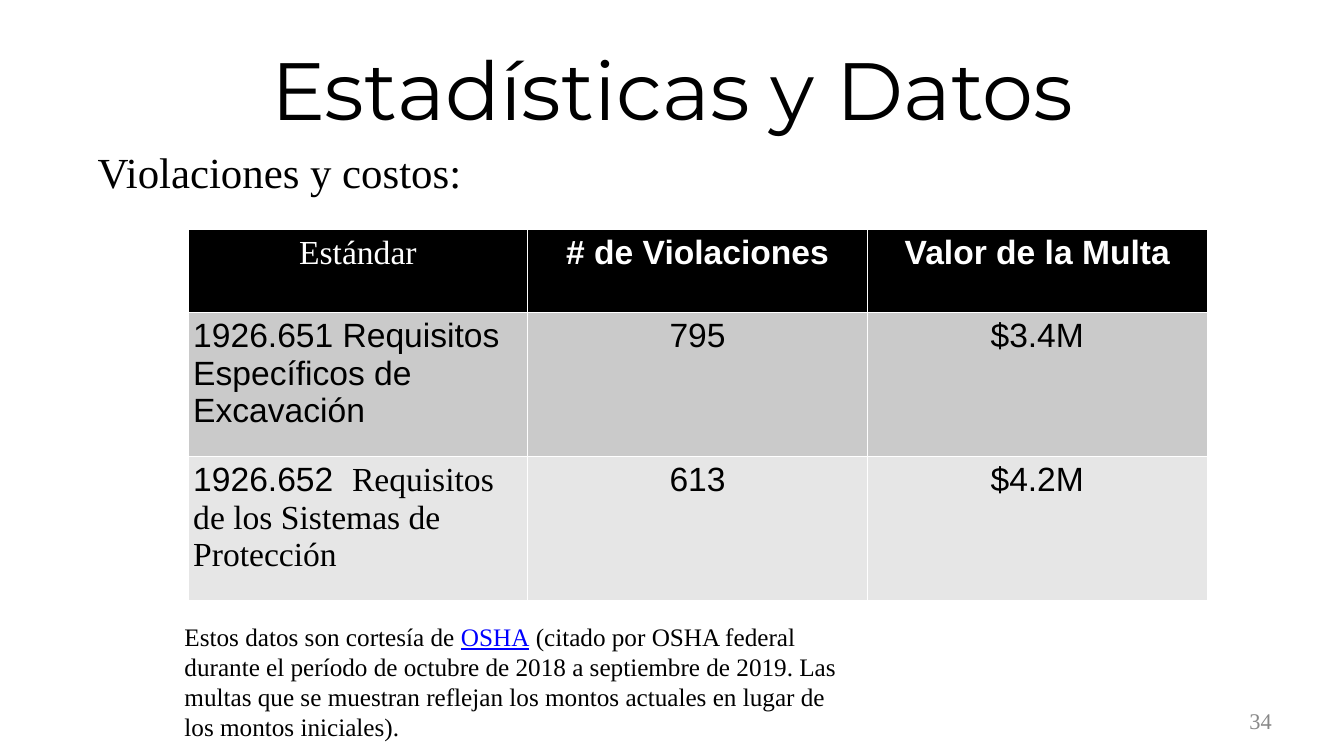
from pptx import Presentation
from pptx import util as u
from pptx.dml import color
from pptx.enum import text

SERIF = "Times New Roman"
SANS = "Arial"
MID = text.PP_ALIGN.CENTER


def style(run, size, face, hue, bold=False):
    font = run.font
    font.size = u.Pt(size)
    font.name = face
    font.bold = bold
    font.color.rgb = color.RGBColor.from_string(hue)


def inset(item):
    item.margin_left = item.margin_right = u.Cm(0.13)
    item.margin_top = item.margin_bottom = u.Cm(0.13)


deck = Presentation()
deck.slide_width = u.Cm(33.87)
deck.slide_height = u.Cm(19.05)
slide = deck.slides.add_slide(deck.slide_layouts[5])

title = slide.shapes.title
title.left, title.top = u.Cm(2.33), u.Cm(0.38)
title.width, title.height = u.Cm(29.21), u.Cm(3.68)
frame = title.text_frame
inset(frame)
frame.vertical_anchor = text.MSO_ANCHOR.MIDDLE
frame.text = "Estadísticas y Datos"
frame.paragraphs[0].alignment = MID
style(frame.paragraphs[0].runs[0], 58, "Montserrat", "000000")

source = [
    "Estos datos son cortesía de ",
    "OSHA",
    " (citado por OSHA federal durante el período de octubre de 2018 a septiembre de 2019. "
    "Las multas que se muestran reflejan los montos actuales en lugar de los montos iniciales).",
]
boxes = [
    (2.33, 3.68, 9.9, 1.78, ["Violaciones y costos:"], 30.6, "000000"),
    (31.32, 17.73, 0.86, 0.86, ["34"], 16, "888888"),
    (4.52, 15.52, 17.25, 3.33, source, 18, "000000"),
]
paras = []
for left, top, width, height, parts, size, hue in boxes:
    box = slide.shapes.add_textbox(u.Cm(left), u.Cm(top), u.Cm(width), u.Cm(height))
    frame = box.text_frame
    frame.word_wrap = True
    inset(frame)
    para = frame.paragraphs[0]
    for part in parts:
        run = para.add_run()
        run.text = part
        style(run, size, SERIF, hue)
    paras.append(para)

intro, page, note = paras
intro.line_spacing = 0.9
page.alignment = text.PP_ALIGN.RIGHT
box = slide.shapes[2]
box.text_frame.vertical_anchor = text.MSO_ANCHOR.MIDDLE
style(note.runs[1], 18, SERIF, "0000FF")
note.runs[1].font.underline = True

rows = [
    (2.1, "000000", "FFFFFF", ["Estándar", "# de Violaciones", "Valor de la Multa"]),
    (3.63, "CACACA", "000000", ["1926.651 Requisitos Específicos de Excavación", "795", "$3.4M"]),
    (3.63, "E6E6E6", "000000", ["1926.652  ", "613", "$4.2M"]),
]
table = slide.shapes.add_table(3, 3, u.Cm(4.74), u.Cm(5.77), u.Cm(25.68), u.Cm(9.36)).table
for r, (height, fill, hue, words) in enumerate(rows):
    table.rows[r].height = u.Cm(height)
    for c, word in enumerate(words):
        cell = table.cell(r, c)
        inset(cell)
        cell.fill.solid()
        cell.fill.fore_color.rgb = color.RGBColor.from_string(fill)
        cell.text_frame.text = word
        para = cell.text_frame.paragraphs[0]
        if r == 0 or c > 0:
            para.alignment = MID
        style(para.runs[0], 24, SANS, hue, r == 0)

style(table.cell(0, 0).text_frame.paragraphs[0].runs[0], 24, SERIF, "FFFFFF")
run = table.cell(2, 0).text_frame.paragraphs[0].add_run()
run.text = "Requisitos de los Sistemas de Protección"
style(run, 24, SERIF, "000000")

deck.save("out.pptx")
